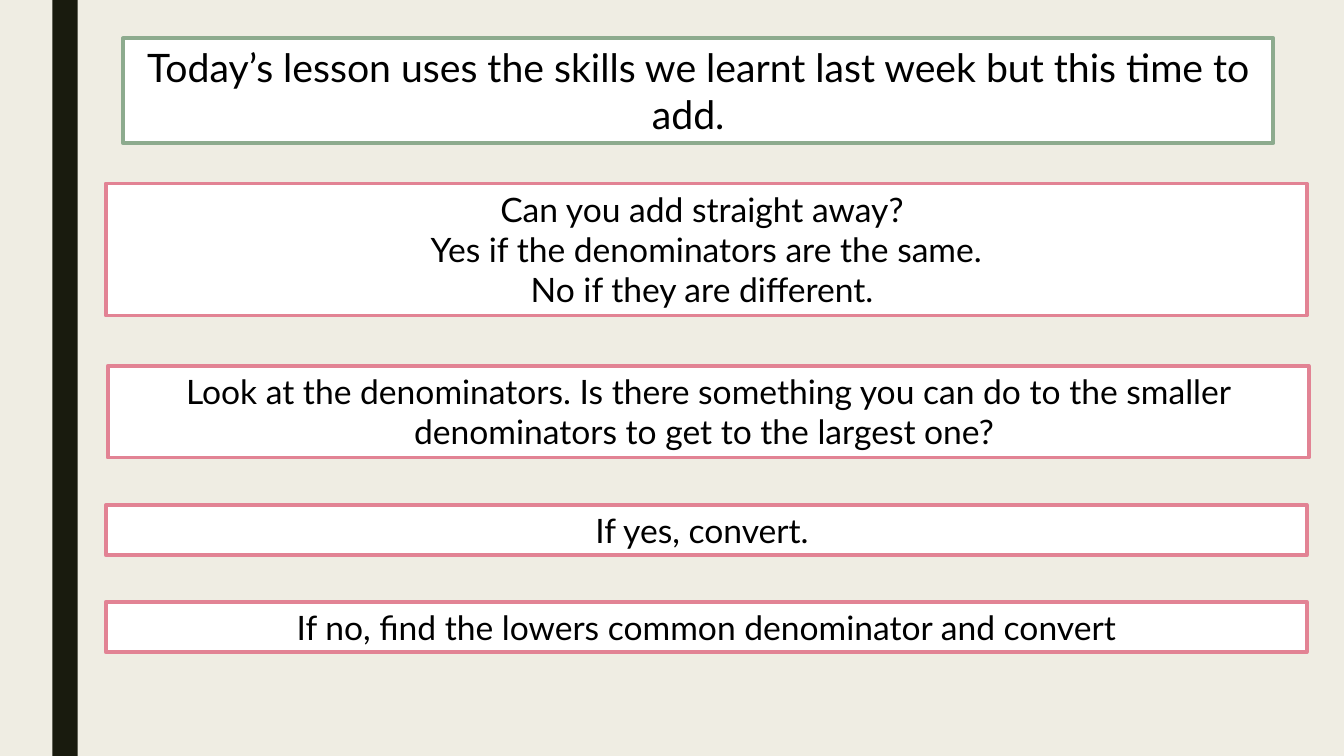
from dataclasses import dataclass

from pptx import Presentation
from pptx import util as u
from pptx.dml.color import RGBColor
from pptx.enum import shapes, text


@dataclass(frozen=True)
class Theme:
    paper: RGBColor = RGBColor.from_string("EFEDE3")
    bar: RGBColor = RGBColor.from_string("191B0E")
    card: RGBColor = RGBColor.from_string("FFFFFF")
    ink: RGBColor = RGBColor.from_string("000000")
    green: RGBColor = RGBColor.from_string("8DAB8E")
    pink: RGBColor = RGBColor.from_string("E28394")
    font: str = "Lato"
    title_size: int = 28
    body_size: int = 24
    border: float = 2.75


theme = Theme()


def place(box, left, top, width, height):
    box.left, box.top = u.Inches(left), u.Inches(top)
    box.width, box.height = u.Inches(width), u.Inches(height)


def fill_card(box, lines, border, size):
    box.fill.solid()
    box.fill.fore_color.rgb = theme.card
    box.line.color.rgb = border
    box.line.width = u.Pt(theme.border)
    frame = box.text_frame
    frame.text = "\n".join(lines)
    frame.word_wrap = True
    frame.auto_size = text.MSO_AUTO_SIZE.SHAPE_TO_FIT_TEXT
    frame.vertical_anchor = text.MSO_ANCHOR.TOP
    for para in frame.paragraphs:
        para.alignment = text.PP_ALIGN.CENTER
        para.font.name = theme.font
        para.font.size = u.Pt(size)
        para.font.color.rgb = theme.ink


deck = Presentation()
deck.slide_width, deck.slide_height = u.Inches(13.33), u.Inches(7.5)
page = deck.slides.add_slide(deck.slide_layouts.get_by_name("Title Only"))
page.background.fill.solid()
page.background.fill.fore_color.rgb = theme.paper

bar = page.shapes.add_shape(
    shapes.MSO_SHAPE.RECTANGLE, u.Inches(0.52), 0, u.Inches(0.25), deck.slide_height
)
bar.shadow.inherit = False
bar.fill.solid()
bar.fill.fore_color.rgb = theme.bar
bar.line.fill.background()

title = page.shapes.title
place(title, 1.22, 0.38, 11.41, 1.04)
fill_card(
    title,
    ["Today’s lesson uses the skills we learnt last week but this time to add.  "],
    theme.green,
    theme.title_size,
)

steps = [
    (1.05, 1.82, 1.31, [
        "Can you add straight away? ",
        "Yes if the denominators are the same.",
        "No if they are different. ",
    ]),
    (1.07, 3.63, 0.91, [
        "Look at the denominators. Is there something you can do to the smaller "
        "denominators to get to the largest one? ",
    ]),
    (1.05, 5.01, 0.5, ["If yes, convert. "]),
    (1.05, 5.97, 0.5, ["If no, find the lowers common denominator and convert"]),
]
for left, top, height, lines in steps:
    step = page.shapes.add_textbox(0, 0, 0, 0)
    place(step, left, top, 11.91, height)
    fill_card(step, lines, theme.pink, theme.body_size)

deck.save("out.pptx")
